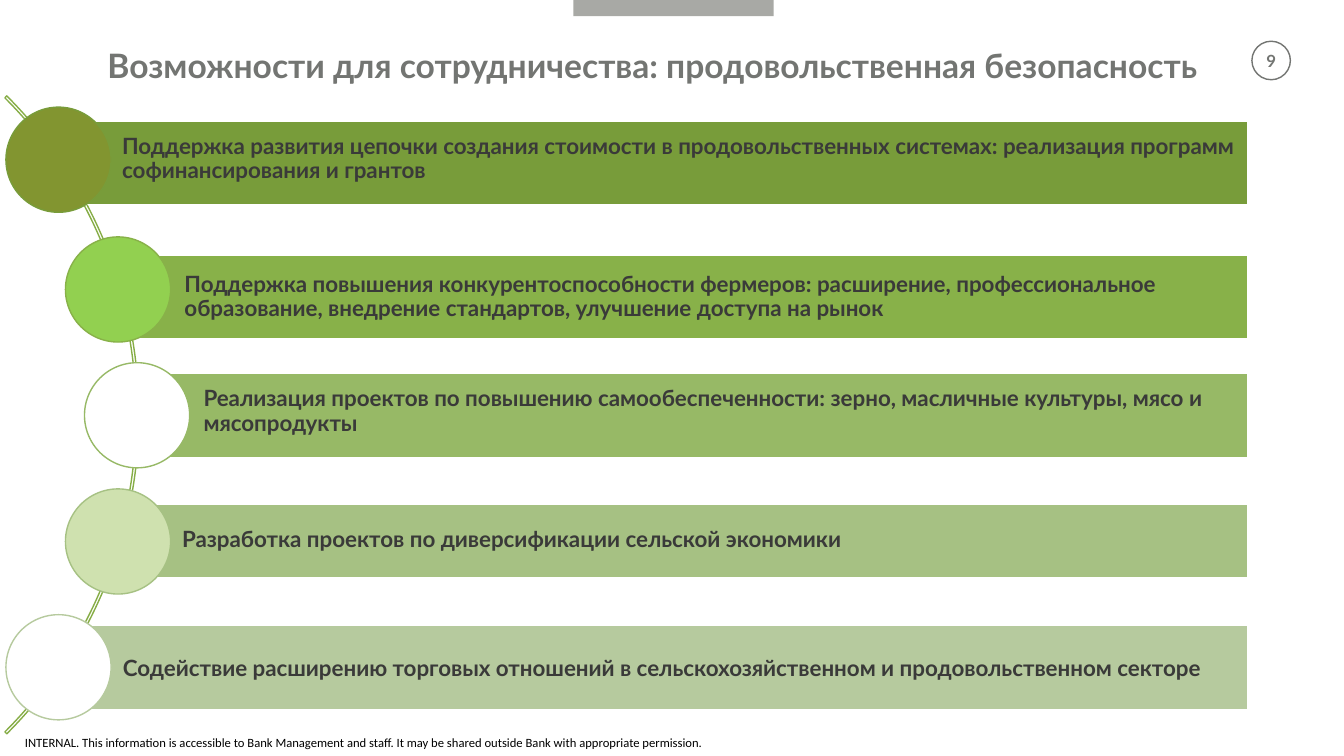
import pptx
import pptx.util
from pptx.dml.color import RGBColor
from pptx.enum.shapes import MSO_SHAPE
from pptx.enum.text import MSO_ANCHOR, PP_ALIGN
from pptx.util import Cm, Pt

TITLE = "Возможности для сотрудничества: продовольственная безопасность"
PAGE_NUMBER = "9"
FOOTER = ("INTERNAL. This information is accessible to Bank Management and staff. "
          "It may be shared outside Bank with appropriate permission.")

COLORS = {
    "gray": "737572", "tab": "A8A9A5", "text": "3A3A39", "black": "000000",
    "white": "FFFFFF", "arc": "86AD46",
}

# Text, bar colour, circle colour, bar (left, top, height),
# circle (left, top), text inset on the left and at the bottom; all in cm
OPPORTUNITIES = [
    ("Поддержка развития цепочки создания стоимости в продовольственных системах: "
     "реализация программ софинансирования и грантов",
     "789C3A", "829530", (1.4, 3.05, 2.11), (0.15, 2.7), (1.68, 0.3)),
    ("Поддержка повышения конкурентоспособности фермеров: расширение, профессиональное "
     "образование, внедрение стандартов, улучшение доступа на рынок",
     "88B149", "92D050", (2.97, 6.43, 2.11), (1.65, 5.97), (1.68, 0.1)),
    ("Реализация проектов по повышению самообеспеченности: зерно, масличные культуры, "
     "мясо и мясопродукты",
     "97B966", "FFFFFF", (3.45, 9.42, 2.11), (2.13, 9.14), (1.68, 0.3)),
    ("Разработка проектов по диверсификации сельской экономики",
     "A6C183", "CFE1AF", (2.51, 12.7, 1.85), (1.65, 12.32), (2.08, 0.1)),
    ("Содействие расширению торговых отношений в сельскохозяйственном и "
     "продовольственном секторе",
     "B6CA9E", "FFFFFF", (1.42, 15.77, 2.11), (0.15, 15.49), (1.68, 0)),
]
BAR_RIGHT = 31.45
CIRCLE_SIZE = 2.65


def add_shape(slide, kind, box, fill=None, line=None):
    shape = slide.shapes.add_shape(kind, *[Cm(length) for length in box])
    shape.shadow.inherit = False
    if fill:
        shape.fill.solid()
        shape.fill.fore_color.rgb = RGBColor.from_string(fill)
    else:
        shape.fill.background()
    if line:
        shape.line.color.rgb = RGBColor.from_string(line)
        shape.line.width = Pt(1)
    else:
        shape.line.fill.background()
    return shape


def set_text(shape, text, size, color, font="Lato", bold=True,
             align=PP_ALIGN.LEFT, insets=(0, 0, 0, 0)):
    frame = shape.text_frame
    frame.word_wrap = True
    frame.vertical_anchor = MSO_ANCHOR.MIDDLE
    (frame.margin_left, frame.margin_top,
     frame.margin_right, frame.margin_bottom) = [Cm(inset) for inset in insets]
    frame.text = text
    paragraph = frame.paragraphs[0]
    paragraph.alignment = align
    run_font = paragraph.runs[0].font
    run_font.name = font
    run_font.size = Pt(size)
    run_font.bold = bold
    run_font.color.rgb = RGBColor.from_string(color)
    return paragraph


def add_label(slide, box, *args, **options):
    label = slide.shapes.add_textbox(*[Cm(length) for length in box])
    set_text(label, *args, **options)


def main():
    presentation = pptx.Presentation()
    presentation.slide_width = Cm(33.87)
    presentation.slide_height = Cm(19.05)
    slide = presentation.slides.add_slide(presentation.slide_layouts[6])

    # Page furniture
    add_shape(slide, MSO_SHAPE.RECTANGLE, (14.45, 0, 5.05, 0.41), COLORS["tab"])
    badge = add_shape(slide, MSO_SHAPE.OVAL, (31.55, 1.04, 0.97, 0.97),
                      line=COLORS["gray"])
    set_text(badge, PAGE_NUMBER, 12, COLORS["gray"], align=PP_ALIGN.CENTER)
    add_label(slide, (0.63, 18.36, 17.6, 0.69), FOOTER, 9, COLORS["black"],
              font="Calibri", bold=False)

    # Arc that the circles sit on
    arc = add_shape(slide, MSO_SHAPE.BLOCK_ARC, (-19.23, -0.91, 22.73, 22.73),
                    line=COLORS["arc"])
    for index, value in enumerate((189, 27, 0.003)):
        arc.adjustments[index] = value

    # Bars with circles
    for text, bar_color, circle_color, bar_place, circle_place, inset in OPPORTUNITIES:
        left, top, height = bar_place
        bar = add_shape(slide, MSO_SHAPE.RECTANGLE,
                        (left, top, BAR_RIGHT - left, height),
                        bar_color, COLORS["white"])
        paragraph = set_text(bar, text, 16, COLORS["text"],
                             insets=(inset[0], 0.1, 0.1, inset[1]))
        paragraph.line_spacing = 0.9
        add_shape(slide, MSO_SHAPE.OVAL, (*circle_place, CIRCLE_SIZE, CIRCLE_SIZE),
                  circle_color, bar_color)

    # Title
    add_label(slide, (2.29, 0.99, 28.3, 1.28), TITLE, 24, COLORS["gray"],
              align=PP_ALIGN.CENTER)

    presentation.save("out.pptx")


if __name__ == "__main__":
    main()
